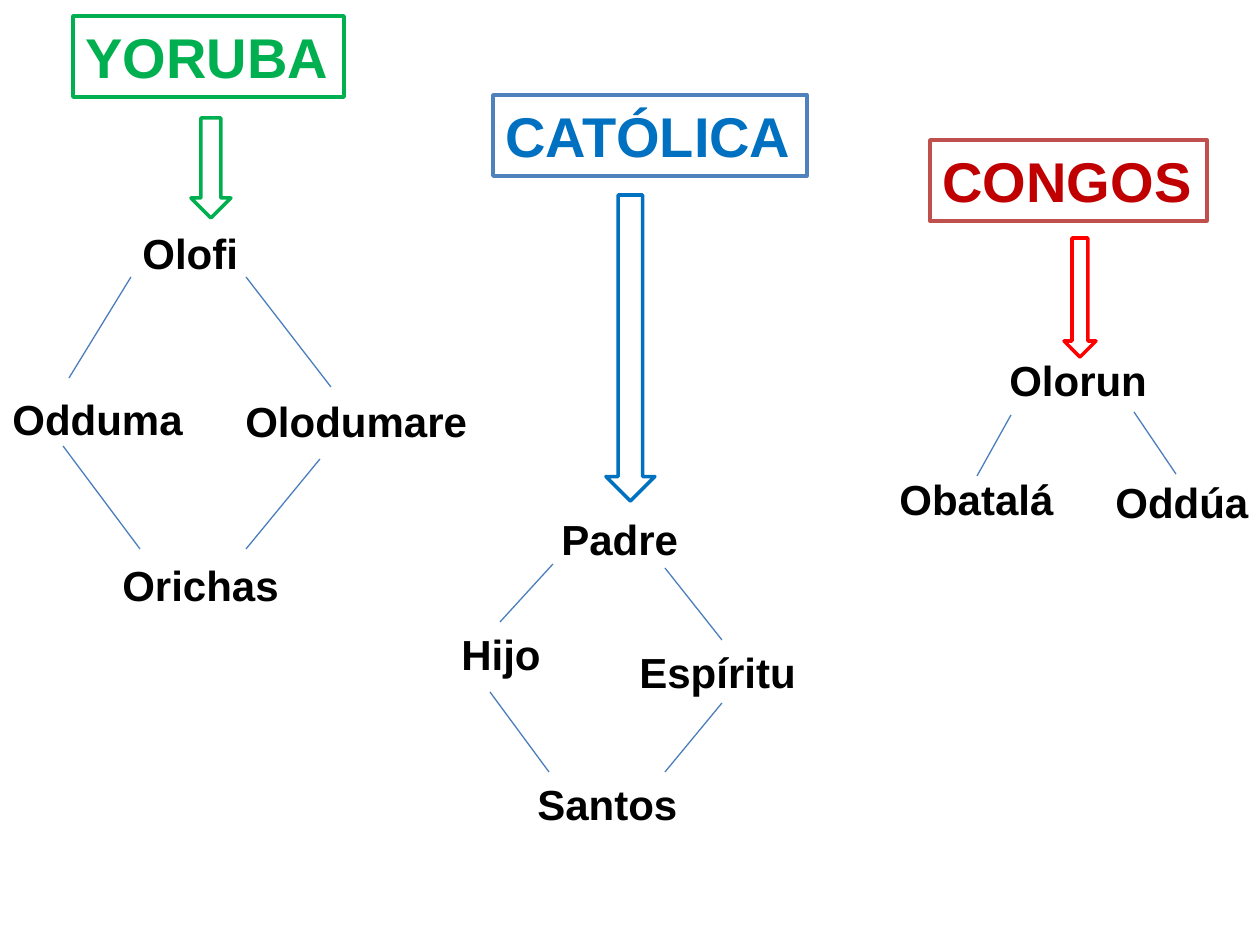
from pptx import Presentation
from pptx.dml.color import RGBColor
from pptx.enum.shapes import MSO_CONNECTOR, MSO_SHAPE
from pptx.enum.text import MSO_ANCHOR, MSO_AUTO_SIZE, PP_ALIGN
from pptx.oxml.ns import qn
from pptx.util import Emu, Pt

PX_PER_INCH = 126
HEADING_HEIGHT = 81
NAME_HEIGHT = 63
BRANCH_BLUE = "4B7EBC"

# heading: text, left, top, width, text colour, border colour
# arrow: left, top, width, height, colour
# names: text, left, top, width, wrap
# branches: x1, y1, x2, y2
TRADITIONS = [
    {
        "heading": ("YORUBA", 73, 16, 271, "00B050", "00B050"),
        "arrow": (191, 118, 40, 100, "00B050"),
        "names": [
            ("Olofi", 130, 221, 122, False),
            ("Odduma", 0, 387, 198, False),
            ("Olodumare", 233, 389, 249, False),
            ("Orichas", 110, 553, 199, True),
        ],
        "branches": [
            (131, 277, 69, 378),
            (246, 277, 331, 387),
            (63, 446, 140, 549),
            (320, 459, 246, 549),
        ],
    },
    {
        "heading": ("CATÓLICA", 493, 95, 314, "0070C0", "4F81BD"),
        "arrow": (606, 195, 49, 306, "0070C0"),
        "names": [
            ("Padre", 549, 507, 144, False),
            ("Hijo", 449, 622, 106, False),
            ("Espíritu", 627, 640, 189, True),
            ("Santos", 525, 772, 166, False),
        ],
        "branches": [
            (553, 564, 500, 622),
            (665, 568, 722, 640),
            (490, 692, 549, 772),
            (722, 703, 665, 772),
        ],
    },
    {
        "heading": ("CONGOS", 930, 140, 277, "C00000", "C0504D"),
        "arrow": (1064, 238, 32, 119, "FF0000"),
        "names": [
            ("Olorun", 997, 348, 164, False),
            ("Obatalá", 887, 467, 181, False),
            ("Oddúa", 1103, 470, 160, False),
        ],
        "branches": [
            (1011, 415, 977, 476),
            (1134, 412, 1176, 474),
        ],
    },
]


def px(*lengths):
    return [Emu(round(length * 914400 / PX_PER_INCH)) for length in lengths]


def rgb(value):
    return RGBColor.from_string(value)


def write(shape, text, size, color, wrap=False):
    frame = shape.text_frame
    frame.word_wrap = wrap
    frame.auto_size = MSO_AUTO_SIZE.SHAPE_TO_FIT_TEXT
    frame.vertical_anchor = MSO_ANCHOR.TOP
    line = frame.paragraphs[0]
    line.text = text
    line.alignment = PP_ALIGN.LEFT
    line.font.name = "Arial"
    line.font.size = Pt(size)
    line.font.bold = True
    line.font.color.rgb = rgb(color)


def add_outlined(slide, preset, box, border):
    shape = slide.shapes.add_shape(preset, *px(*box))
    shape.shadow.inherit = False
    shape.fill.background()
    shape.line.color.rgb = rgb(border)
    shape.line.width = Pt(2)
    return shape


def add_heading(slide, text, left, top, width, color, border):
    box = (left, top, width, HEADING_HEIGHT)
    heading = add_outlined(slide, MSO_SHAPE.RECTANGLE, box, border)
    heading.fill.solid()
    heading.fill.fore_color.rgb = rgb("FFFFFF")
    write(heading, text, 32, color)


def add_arrow(slide, left, top, width, height, color):
    add_outlined(slide, MSO_SHAPE.DOWN_ARROW, (left, top, width, height), color)


def add_name(slide, text, left, top, width, wrap):
    name = slide.shapes.add_textbox(*px(left, top, width, NAME_HEIGHT))
    write(name, text, 24, "000000", wrap)


def add_branch(slide, *ends):
    branch = slide.shapes.add_connector(MSO_CONNECTOR.STRAIGHT, *px(*ends))
    branch.line.color.rgb = rgb(BRANCH_BLUE)
    branch.line.width = Pt(0.75)
    properties = branch._element.spPr
    properties.append(properties.makeelement(qn("a:effectLst"), {}))


def main():
    deck = Presentation()
    deck.slide_width, deck.slide_height = px(1260, 945)
    slide = deck.slides.add_slide(deck.slide_layouts[6])
    for tradition in TRADITIONS:
        add_heading(slide, *tradition["heading"])
        for name in tradition["names"]:
            add_name(slide, *name)
        for branch in tradition["branches"]:
            add_branch(slide, *branch)
        add_arrow(slide, *tradition["arrow"])
    deck.save("out.pptx")


if __name__ == "__main__":
    main()
